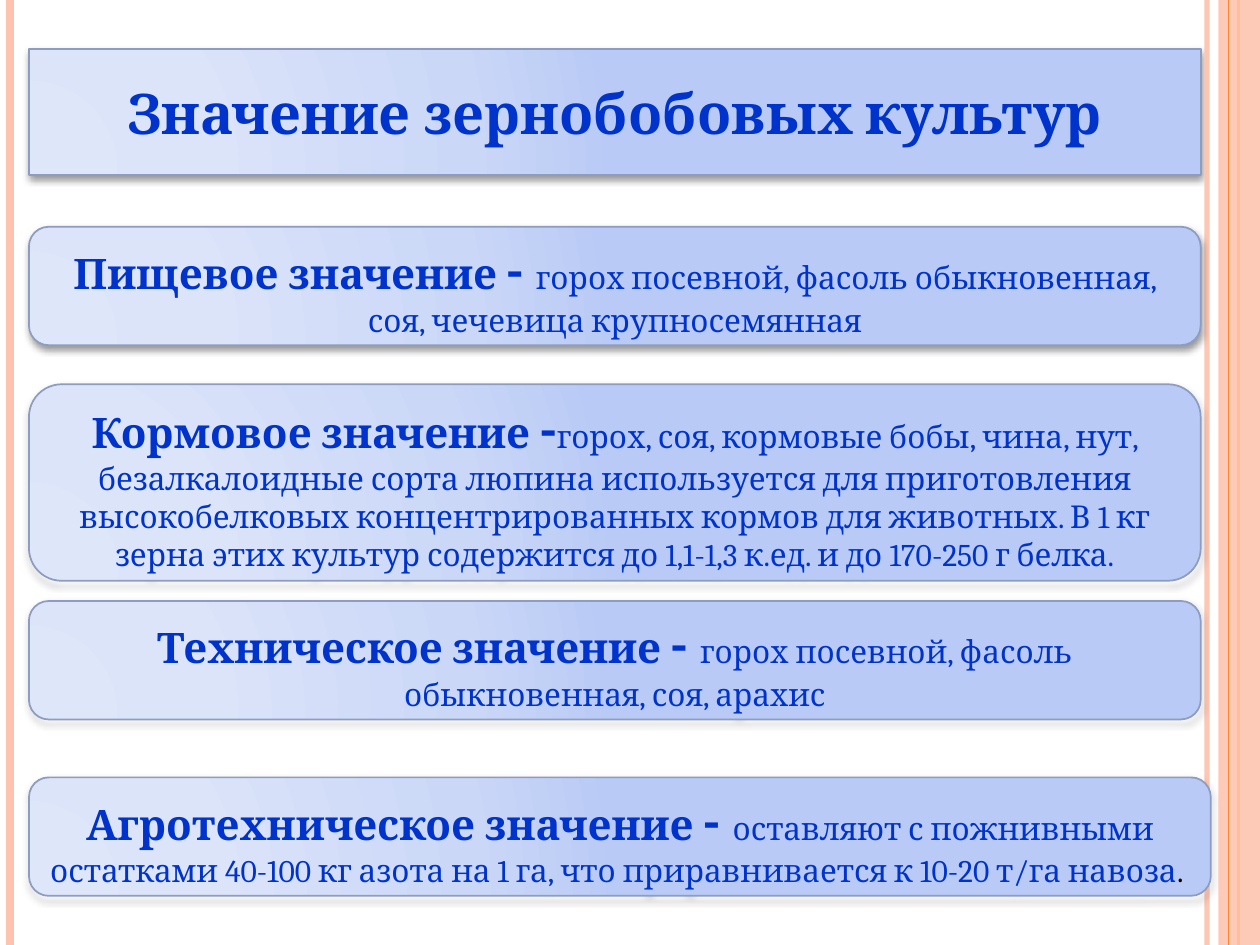
import pptx
import pptx.dml.color
import pptx.enum.shapes
import pptx.enum.text
import pptx.oxml
import pptx.oxml.ns
import pptx.util
from lxml import etree

Inches = pptx.util.Inches
Pt = pptx.util.Pt
SHAPES = pptx.enum.shapes.MSO_SHAPE
NAMESPACE = pptx.oxml.ns.nsdecls("a")
BLUE = "0033CC"

HEADING = "Значение зернобобовых культур"
HEADING_PLACE = (0.23, 0.39, 9.3, 1)
USES = [
    ((0.23, 1.8, 9.3, 0.94), "Пищевое значение ", "- ",
     "горох посевной, фасоль обыкновенная, соя, чечевица крупносемянная", ""),
    ((0.23, 3.05, 9.3, 1.56), "Кормовое значение ", "-",
     "горох, соя, кормовые бобы, чина, нут, безалкалоидные сорта люпина используется "
     "для приготовления высокобелковых концентрированных кормов для животных. В 1 кг "
     "зерна этих культур содержится до 1,1-1,3 к.ед. и до 170-250 г белка.", ""),
    ((0.23, 4.77, 9.3, 0.94), "Техническое значение ", "- ",
     "горох посевной, фасоль обыкновенная, соя, арахис", ""),
    ((0.23, 6.17, 9.38, 0.94), "Агротехническое значение ", "- ",
     "оставляют с пожнивными остатками 40-100 кг азота на 1 га, "
     "что приравнивается к 10-20 т/га навоза", ". "),
]
STRIPES = [
    (9.58, "FEC3AE", 3, 93),
    (0.08, "FEC3AE", 4.5, 100),
    (9.83, "FE8637", 1.5, 100),
    (9.75, "FE8637", 0.75, 100),
]
BAND = (9.67, 0, 0.33, 7.5)
GRADIENT = [(0, "DEE6FA"), (30, "DBE4F9"), (75, "CAD7F7"), (100, "B8CAF5")]


def paint(color_format, value, opacity=100):
    color_format.rgb = pptx.dml.color.RGBColor.from_string(value)
    if opacity < 100:
        color = color_format._xFill.find(".//" + pptx.oxml.ns.qn("a:srgbClr"))
        etree.SubElement(color, pptx.oxml.ns.qn("a:alpha"), val=str(opacity * 1000))


def add_stripe(page, x, color, width, opacity):
    stripe = page.shapes.add_connector(
        pptx.enum.shapes.MSO_CONNECTOR.STRAIGHT, Inches(x), 0, Inches(x), Inches(7.5))
    stripe.line.width = Pt(width)
    stripe.line.fill.solid()
    paint_fill(stripe.line.fill, color, opacity)
    properties = stripe._element.spPr
    etree.SubElement(properties, pptx.oxml.ns.qn("a:effectLst"))


def paint_fill(fill, value, opacity=100):
    fill.solid()
    paint(fill.fore_color, value, opacity)


def style_panel(panel):
    panel.line.width = Pt(1)
    paint_fill(panel.line.fill, "8D9CBF")
    stops = "".join(
        f'<a:gs pos="{place * 1000}"><a:srgbClr val="{color}"/></a:gs>'
        for place, color in GRADIENT)
    gradient = pptx.oxml.parse_xml(
        f'<a:gradFill {NAMESPACE} rotWithShape="1"><a:gsLst>{stops}</a:gsLst>'
        '<a:path path="circle"><a:fillToRect l="5000" t="100000" r="120000" b="10000"/>'
        '</a:path></a:gradFill>')
    shadow = pptx.oxml.parse_xml(
        f'<a:effectLst {NAMESPACE}><a:outerShdw blurRad="{Pt(4)}" dist="{Pt(2)}" '
        'dir="5400000" rotWithShape="0"><a:srgbClr val="000000">'
        '<a:alpha val="40000"/></a:srgbClr></a:outerShdw></a:effectLst>')
    properties = panel._element.spPr
    properties.find(pptx.oxml.ns.qn("a:ln")).addprevious(gradient)
    properties.append(shadow)


def write_spans(panel, spans):
    frame = panel.text_frame
    frame.word_wrap = True
    frame.auto_size = pptx.enum.text.MSO_AUTO_SIZE.NONE
    frame.vertical_anchor = pptx.enum.text.MSO_ANCHOR.MIDDLE
    para = frame.paragraphs[0]
    para.alignment = pptx.enum.text.PP_ALIGN.CENTER
    for text, size, bold, color in spans:
        span = para.add_run()
        span.text = text
        span.font.name = "Cambria"
        span.font.size = Pt(size)
        span.font.bold = bold
        paint(span.font.color, color)


def main():
    deck = pptx.Presentation()
    deck.slide_width, deck.slide_height = Inches(10), Inches(7.5)
    page = deck.slides.add_slide(deck.slide_layouts[5])

    for stripe in STRIPES[:3]:
        add_stripe(page, *stripe)
    band = page.shapes.add_shape(SHAPES.RECTANGLE, *map(Inches, BAND))
    band.shadow.inherit = False
    paint_fill(band.fill, "FEC3AE", 87)
    band.line.fill.background()
    add_stripe(page, *STRIPES[3])

    title = page.shapes.title
    title.left, title.top, title.width, title.height = map(Inches, HEADING_PLACE)
    title._element.spPr.append(pptx.oxml.parse_xml(
        f'<a:prstGeom {NAMESPACE} prst="roundRect"><a:avLst/></a:prstGeom>'))
    style_panel(title)
    write_spans(title, [(HEADING, 32, True, BLUE)])

    for place, name, dash, detail, ending in USES:
        panel = page.shapes.add_shape(SHAPES.ROUNDED_RECTANGLE, *map(Inches, place))
        style_panel(panel)
        spans = [(name, 24, True, BLUE), (dash, 32, True, BLUE),
                 (detail, 18, False, BLUE), (ending, 18, False, "000000")]
        write_spans(panel, [span for span in spans if span[0]])

    deck.save("out.pptx")


if __name__ == "__main__":
    main()
